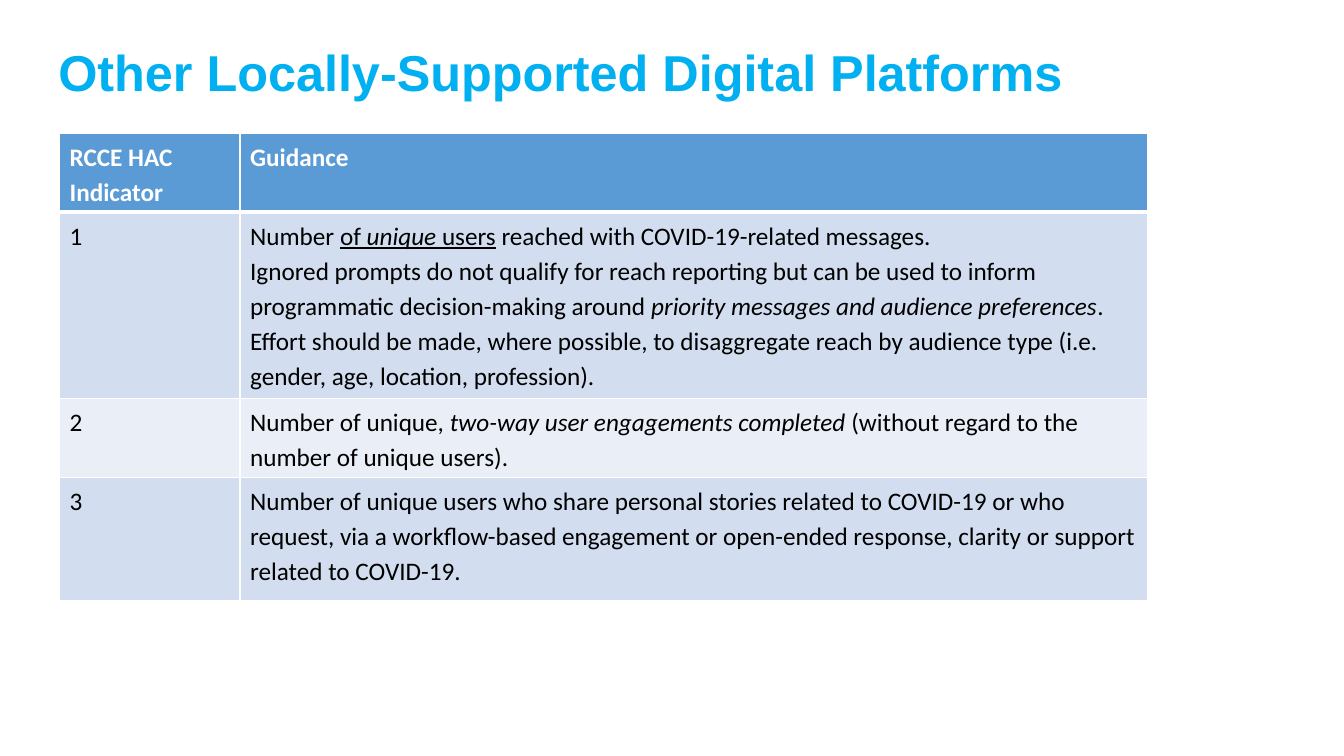
from dataclasses import dataclass

from lxml import etree
from pptx import Presentation
from pptx.dml.color import RGBColor
from pptx.enum.text import MSO_ANCHOR
from pptx.oxml.ns import qn
from pptx.util import Cm, Pt

MIDDLE = MSO_ANCHOR.MIDDLE


@dataclass(frozen=True)
class Theme:
    title: str = "00B0F0"
    head: str = "5B9BD5"
    bands: tuple = ("D2DEEF", "EAEFF7")
    white: str = "FFFFFF"
    black: str = "000000"
    title_font: str = "Arial"
    body_font: str = "Calibri"
    title_size: int = 36
    body_size: int = 18


THEME = Theme()
TITLE = "Other Locally-Supported Digital Platforms"

# Each cell is a list of paragraphs, each paragraph a list of (text, style);
# style holds "i" for italic and "u" for underline
HEADS = ("RCCE HAC Indicator", "Guidance")
GUIDES = [
    [
        [("Number ", ""), ("of ", "u"), ("unique", "iu"), (" users", "u"),
         (" reached with COVID-19-related messages.", "")],
        [("Ignored prompts do not qualify for reach reporting but can be used "
          "to inform programmatic decision-making around ", ""),
         ("priority messages and audience preferences", "i"),
         (". Effort should be made, where possible, to disaggregate reach by "
          "audience type (i.e. gender, age, location, profession).", "")],
    ],
    [
        [("Number of unique, ", ""),
         ("two-way user engagements completed ", "i"),
         ("(without regard to the number of unique users).", "")],
    ],
    [
        [("Number of unique users who share personal stories related to "
          "COVID-19 or who request, via a workflow-based engagement or "
          "open-ended response, clarity or support related to COVID-19.", "")],
    ],
]
COLS = (4.55, 22.88)
ROWS = (1.98, 4.7, 1.98, 3.1)


def set_font(para, name, size, color, bold):
    font = para.font
    font.name, font.size, font.bold = name, Pt(size), bold
    font.color.rgb = RGBColor.from_string(color)


def add_title(slide, text):
    box = slide.shapes.add_textbox(Cm(1.22), Cm(0.74), Cm(31.55), Cm(2.29))
    frame = box.text_frame
    frame.word_wrap = True
    frame.vertical_anchor = MIDDLE
    para = frame.paragraphs[0]
    para.text = text
    para.line_spacing = 0.9
    set_font(para, THEME.title_font, THEME.title_size, THEME.title, True)


def add_edges(cell, top, bottom):
    props = cell._tc.get_or_add_tcPr()
    edges = (("lnL", 1), ("lnR", 1), ("lnT", top), ("lnB", bottom))
    for place, (tag, width) in enumerate(edges):
        line = etree.Element(qn(f"a:{tag}"), w=str(Pt(width)))
        fill = etree.SubElement(line, qn("a:solidFill"))
        etree.SubElement(fill, qn("a:srgbClr"), val=THEME.white)
        props.insert(place, line)


def fill_cell(cell, paras, fill, color, bold):
    cell.fill.solid()
    cell.fill.fore_color.rgb = RGBColor.from_string(fill)
    frame = cell.text_frame
    for num, parts in enumerate(paras):
        para = frame.add_paragraph() if num else frame.paragraphs[0]
        para.line_spacing = 1.14
        set_font(para, THEME.body_font, THEME.body_size, color, bold)
        for text, style in parts:
            run = para.add_run()
            run.text = text
            if "i" in style:
                run.font.italic = True
            if "u" in style:
                run.font.underline = True


def add_grid(slide):
    rows = [[[[(head, "")]] for head in HEADS]]
    rows += [[[[(str(num), "")]], guide] for num, guide in enumerate(GUIDES, 1)]
    table = slide.shapes.add_table(
        len(ROWS), len(COLS), Cm(1.5), Cm(3.35), Cm(sum(COLS)), Cm(sum(ROWS))
    ).table
    for col, width in zip(table.columns, COLS):
        col.width = Cm(width)
    for row, height in zip(table.rows, ROWS):
        row.height = Cm(height)
    for r, row in enumerate(rows):
        head = r == 0
        fill = THEME.head if head else THEME.bands[(r - 1) % 2]
        color = THEME.white if head else THEME.black
        for c, paras in enumerate(row):
            cell = table.cell(r, c)
            fill_cell(cell, paras, fill, color, head)
            # The rule under the header is heavier
            add_edges(cell, 3 if r == 1 else 1, 3 if head else 1)


def main():
    deck = Presentation()
    deck.slide_width, deck.slide_height = Cm(33.87), Cm(19.05)
    slide = deck.slides.add_slide(deck.slide_layouts[6])
    add_title(slide, TITLE)
    add_grid(slide)
    deck.save("out.pptx")


if __name__ == "__main__":
    main()
